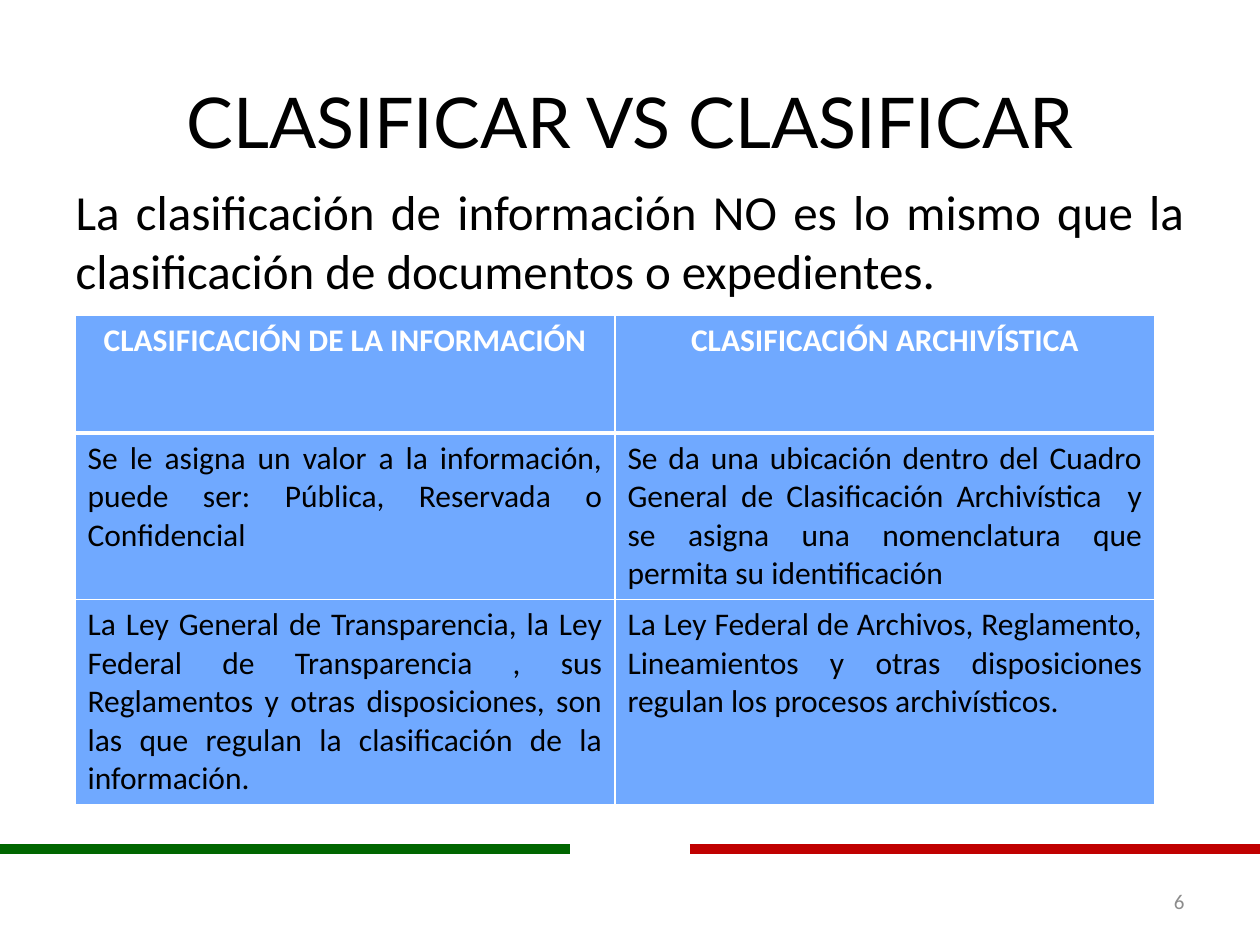
"""Builds the slide that contrasts classifying information with classifying archives."""
from lxml.etree import SubElement
from pptx import Presentation
from pptx.dml.color import RGBColor
from pptx.enum.shapes import MSO_CONNECTOR
from pptx.enum.text import MSO_ANCHOR, PP_ALIGN
from pptx.oxml import parse_xml
from pptx.oxml.ns import nsdecls, qn
from pptx.util import Emu, Pt

TITLE = "CLASIFICAR VS CLASIFICAR"
STATEMENT = "La clasificación de información NO es lo mismo que la clasificación de documentos o expedientes."
COMPARISON = [
    ("CLASIFICACIÓN DE LA INFORMACIÓN", "CLASIFICACIÓN ARCHIVÍSTICA"),
    ("Se le asigna un valor a la información, puede ser: Pública, Reservada o Confidencial",
     "Se da una ubicación dentro del Cuadro General de Clasificación Archivística  y se asigna "
     "una nomenclatura que permita su identificación"),
    ("La Ley General de Transparencia, la Ley Federal de Transparencia , sus Reglamentos y otras "
     "disposiciones, son las que regulan la clasificación de la información.",
     "La Ley Federal de Archivos, Reglamento, Lineamientos y otras disposiciones regulan los "
     "procesos archivísticos."),
]
PAGE_NUMBER = "6"

COLORS = {"text": "000000", "white": "FFFFFF", "cell": "0066FF",
          "green": "006600", "red": "C00000", "number": "8C8C8C"}
WIDTH, HEIGHT = 1260, 945
ROW_HEIGHTS = [118, 166, 204]
COLUMN_WIDTH = 540
BAND_Y, BAND_LENGTH = 849, 570
CELL_OPACITY = 56

FORMATS = {
    "title": {"size": Pt(40), "name": "Lato", "bold": False},
    "statement": {"size": Pt(28), "name": "Calibri", "bold": False},
    "header": {"size": Pt(18), "name": "Calibri", "bold": True},
    "cell": {"size": Pt(18), "name": "Calibri", "bold": False},
    "number": {"size": Pt(12), "name": "Calibri", "bold": False},
}


def px(length):
    return Emu(round(length * 914400 / 126))


def place(part, left, top, width, height):
    box = {"left": left, "top": top, "width": width, "height": height}
    for side, length in box.items():
        setattr(part, side, px(length))


def write(frame, words, style, color, align):
    paragraph = frame.paragraphs[0]
    paragraph.alignment = align
    run = paragraph.add_run()
    run.text = words
    for key, value in FORMATS[style].items():
        setattr(run.font, key, value)
    run.font.color.rgb = RGBColor.from_string(COLORS[color])
    return paragraph


def style_cell(cell, row):
    cell.fill.solid()
    cell.fill.fore_color.rgb = RGBColor.from_string(COLORS["cell"])
    properties = cell._tc.get_or_add_tcPr()
    tint = properties.find(".//" + qn("a:srgbClr"))
    SubElement(tint, qn("a:alpha"), val=str(CELL_OPACITY * 1000))
    borders = {"lnL": 1, "lnR": 1, "lnT": 3 if row == 1 else 1, "lnB": 3 if row == 0 else 1}
    for position, (side, points) in enumerate(borders.items()):
        properties.insert(position, parse_xml(
            f'<a:{side} {nsdecls("a")} w="{Pt(points)}"><a:solidFill>'
            f'<a:srgbClr val="{COLORS["white"]}"/></a:solidFill></a:{side}>'))


def add_comparison(slide):
    table = slide.shapes.add_table(len(COMPARISON), 2, px(75), px(315), px(2 * COLUMN_WIDTH),
                                   px(sum(ROW_HEIGHTS))).table
    for column in table.columns:
        column.width = px(COLUMN_WIDTH)
    for row, (entries, height) in enumerate(zip(COMPARISON, ROW_HEIGHTS)):
        table.rows[row].height = px(height)
        style, color, align = (("header", "white", PP_ALIGN.CENTER) if row == 0
                               else ("cell", "text", PP_ALIGN.JUSTIFY))
        for column, words in enumerate(entries):
            cell = table.cell(row, column)
            write(cell.text_frame, words, style, color, align)
            style_cell(cell, row)


def add_band(slide, start, color):
    band = slide.shapes.add_connector(MSO_CONNECTOR.STRAIGHT, px(start), px(BAND_Y),
                                      px(start + BAND_LENGTH), px(BAND_Y))
    band.line.color.rgb = RGBColor.from_string(COLORS[color])
    band.line.width = Pt(6)
    SubElement(band._element.spPr, qn("a:effectLst"))


def main():
    deck = Presentation()
    deck.slide_width, deck.slide_height = px(WIDTH), px(HEIGHT)
    slide = deck.slides.add_slide(deck.slide_layouts[1])

    title, statement = slide.placeholders
    place(title, 63, 66, 1134, 110)
    title.text_frame.vertical_anchor = MSO_ANCHOR.MIDDLE
    write(title.text_frame, TITLE, "title", "text", PP_ALIGN.CENTER)

    place(statement, 63, 175, 1134, 669)
    paragraph = write(statement.text_frame, STATEMENT, "statement", "text", PP_ALIGN.JUSTIFY)
    properties = paragraph._p.get_or_add_pPr()
    for key in ("marL", "indent"):
        properties.set(key, "0")
    SubElement(properties, qn("a:buNone"))

    add_comparison(slide)
    for start, color in ((0, "green"), (WIDTH - BAND_LENGTH, "red")):
        add_band(slide, start, color)

    number = slide.shapes.add_textbox(px(903), px(876), px(294), px(50)).text_frame
    number.word_wrap = True
    number.vertical_anchor = MSO_ANCHOR.MIDDLE
    write(number, PAGE_NUMBER, "number", "number", PP_ALIGN.RIGHT)

    deck.save("out.pptx")


if __name__ == "__main__":
    main()
